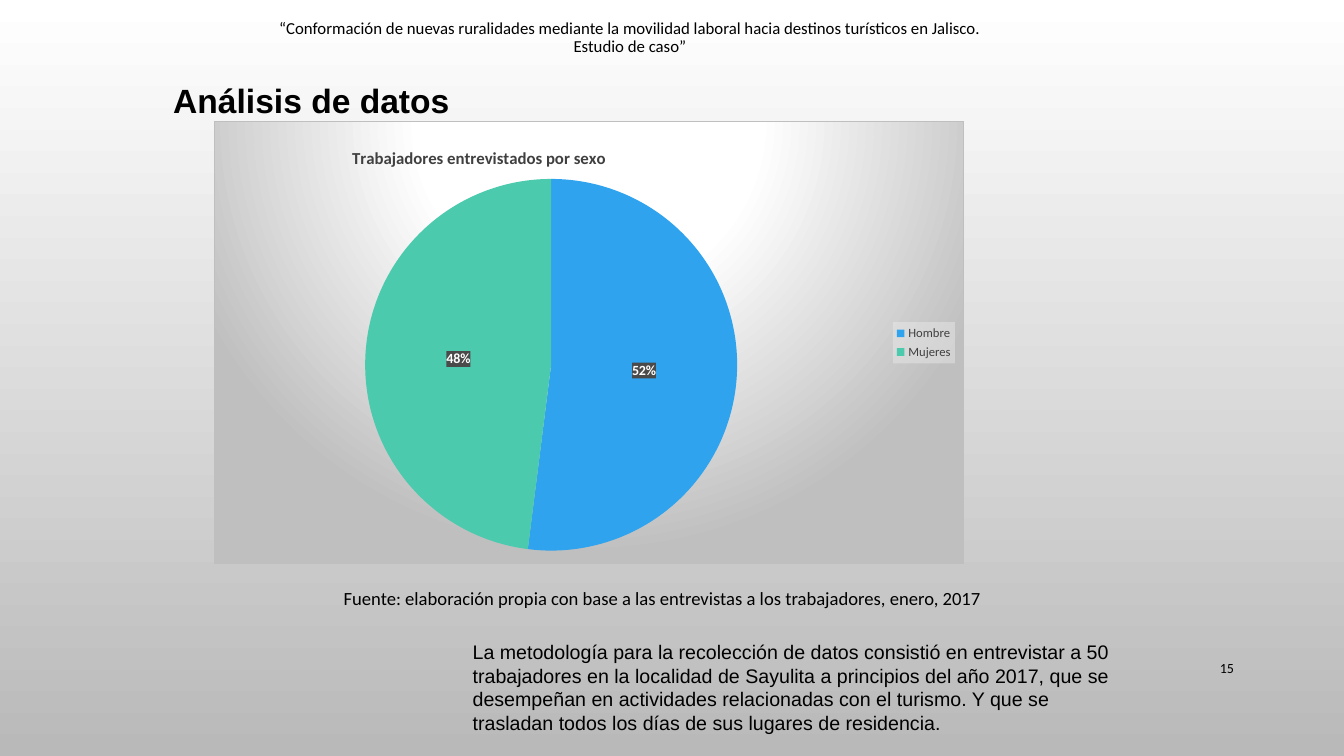
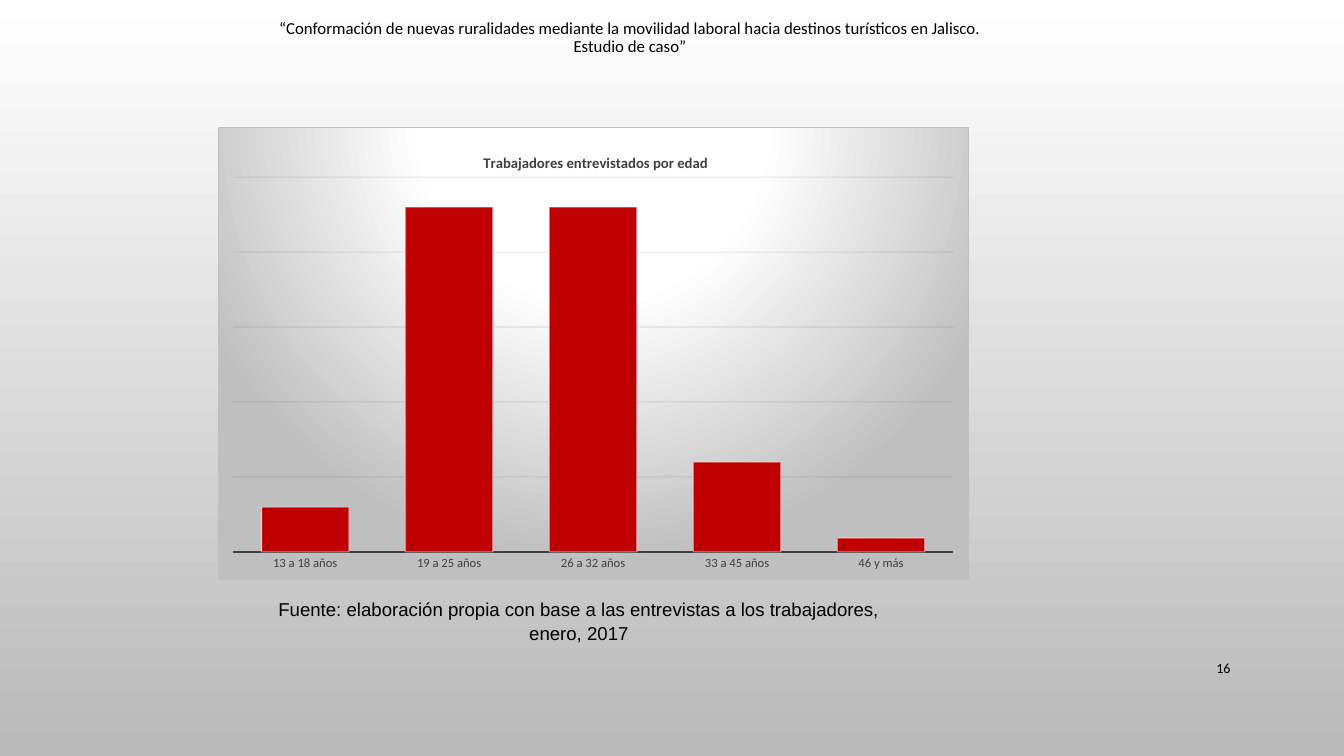
from dataclasses import dataclass
from typing import Any

from pptx import Presentation
from pptx.chart import data as chart_data
from pptx.dml.color import RGBColor
from pptx.enum import chart as ch, text as tx
from pptx.oxml import parse_xml
from pptx.oxml.ns import nsdecls, qn
from pptx.util import Pt

BLACK = RGBColor(0x00, 0x00, 0x00)
WHITE = RGBColor(0xFF, 0xFF, 0xFF)
BACKDROP_GRAY = RGBColor(0xB9, 0xB9, 0xB9)
PANEL_GRAY = RGBColor(0xBF, 0xBF, 0xBF)
LEGEND_GRAY = RGBColor(0xF2, 0xF2, 0xF2)
LABEL_GRAY = RGBColor(0x4A, 0x4A, 0x4A)
DARK_GRAY = RGBColor(0x40, 0x40, 0x40)
GRID_BLACK = RGBColor(0x0D, 0x0D, 0x0D)
BLUE = RGBColor(0x2F, 0xA3, 0xEE)
GREEN = RGBColor(0x4B, 0xCA, 0xAD)
RED = RGBColor(0xC0, 0x00, 0x00)

BODY_FONT = "Calibri"
TEXT_FONT = "Arial"
SOURCE = ("Fuente: elaboración propia con base a las entrevistas "
          "a los trabajadores, enero, 2017")
METHOD = ("La metodología para la recolección de datos consistió en entrevistar a 50 "
          "trabajadores en la localidad de Sayulita a principios del año 2017, que se "
          "desempeñan en actividades relacionadas con el turismo. Y que se trasladan "
          "todos los días de sus lugares de residencia.")
THESIS = ("“Conformación de nuevas ruralidades mediante la movilidad laboral "
          "hacia destinos turísticos en Jalisco.", "Estudio de caso”")


@dataclass(frozen=True)
class Passage:
    lines: tuple[str, ...]
    left: float
    top: float
    width: float
    height: float
    size: float
    font: str = BODY_FONT
    bold: bool = False
    align: Any = tx.PP_ALIGN.LEFT
    anchor: Any = tx.MSO_ANCHOR.TOP
    wrap: bool = True
    grow: bool = True
    side_inset: float = 7.2
    top_inset: float = 3.6
    spacing: float | None = None
    after: float = 0


@dataclass(frozen=True)
class Survey:
    kind: Any
    title: str
    title_size: float
    answers: dict[str, int]
    left: float
    top: float
    width: float
    height: float
    title_place: tuple[float, float]
    plot_place: tuple[float, float, float, float]


def write_passage(slide: Any, passage: Passage) -> None:
    box = slide.shapes.add_textbox(
        Pt(passage.left), Pt(passage.top), Pt(passage.width), Pt(passage.height))
    frame = box.text_frame
    frame.word_wrap = passage.wrap
    frame.auto_size = (tx.MSO_AUTO_SIZE.SHAPE_TO_FIT_TEXT if passage.grow
                       else tx.MSO_AUTO_SIZE.NONE)
    frame.vertical_anchor = passage.anchor
    frame.margin_left = frame.margin_right = Pt(passage.side_inset)
    frame.margin_top = Pt(passage.top_inset)
    paragraph = frame.paragraphs[0]
    paragraph.alignment = passage.align
    paragraph.space_after = Pt(passage.after)
    if passage.spacing:
        paragraph.line_spacing = passage.spacing
    for index, line in enumerate(passage.lines):
        if index:
            paragraph.add_line_break()
        run = paragraph.add_run()
        run.text = line
        style_font(run.font, passage.size, BLACK, passage.bold, passage.font)


def style_font(font: Any, size: float, color: RGBColor,
               bold: bool = False, name: str = BODY_FONT) -> None:
    font.name = name
    font.size = Pt(size)
    font.bold = bold
    font.color.rgb = color


def paint(part: Any, fill: str) -> None:
    properties = parse_xml(f'<c:spPr {nsdecls("c", "a")}>{fill}</c:spPr>')
    part.find(qn("c:txPr")).addprevious(properties)


def solid(color: RGBColor, opacity: int = 100) -> str:
    return (f'<a:solidFill><a:srgbClr val="{color}">'
            f'<a:alpha val="{opacity * 1000}"/></a:srgbClr></a:solidFill>')


def spotlight() -> str:
    stops = "".join(
        f'<a:gs pos="{position * 1000}"><a:srgbClr val="{color}"/></a:gs>'
        for position, color in ((0, WHITE), (39, WHITE), (100, PANEL_GRAY)))
    return (f'<a:gradFill><a:gsLst>{stops}</a:gsLst><a:path path="circle">'
            '<a:fillToRect l="50000" t="-80000" r="50000" b="180000"/></a:path></a:gradFill>'
            f'<a:ln w="{Pt(0.75)}">{solid(PANEL_GRAY)}</a:ln>')


def fade_line(part: Any, opacity: int) -> None:
    for line in part.iter(qn("a:ln")):
        for color in line.iter(qn("a:srgbClr")):
            color.append(parse_xml(f'<a:alpha {nsdecls("a")} val="{opacity * 1000}"/>'))


def place(part: Any, place_at: tuple[float, ...], target: str = "") -> None:
    for previous in part.findall(qn("c:layout")):
        part.remove(previous)
    names = ("x", "y", "w", "h")[:len(place_at)]
    modes = "".join(f'<c:{name}Mode val="edge"/>' for name in ("x", "y"))
    sizes = "".join(f'<c:{name} val="{value}"/>' for name, value in zip(names, place_at))
    layout = parse_xml(f'<c:layout {nsdecls("c")}><c:manualLayout>{target}{modes}{sizes}'
                       '</c:manualLayout></c:layout>')
    content = part.find(qn("c:tx"))
    if content is None:
        part.insert(0, layout)
    else:
        content.addnext(layout)


def draw_survey(slide: Any, survey: Survey) -> Any:
    counts = chart_data.CategoryChartData()
    counts.categories = list(survey.answers)
    counts.add_series("Series 1", list(survey.answers.values()))
    chart = slide.shapes.add_chart(
        survey.kind, Pt(survey.left), Pt(survey.top),
        Pt(survey.width), Pt(survey.height), counts).chart
    style_font(chart.font, 10, BLACK)
    paint(chart.element, spotlight())
    chart.has_legend = False
    chart.has_title = True
    title = chart.chart_title
    run = title.text_frame.paragraphs[0].add_run()
    run.text = survey.title
    style_font(run.font, survey.title_size, DARK_GRAY, True)
    title.include_in_layout = False
    place(title.element, survey.title_place)
    place(chart.element.find(".//" + qn("c:plotArea")), survey.plot_place,
          '<c:layoutTarget val="inner"/>')
    return chart


def draw_sexes(slide: Any) -> None:
    chart = draw_survey(slide, Survey(
        ch.XL_CHART_TYPE.PIE, "Trabajadores entrevistados por sexo", 12,
        {"Hombre": 52, "Mujeres": 48}, 152.64, 86.4, 535.68, 316.8,
        (0.18, 0.05), (0.2, 0.13, 0.5, 0.84)))
    chart.has_legend = True
    chart.legend.position = ch.XL_LEGEND_POSITION.RIGHT
    chart.legend.include_in_layout = False
    style_font(chart.legend.font, 9, DARK_GRAY)
    paint(chart.element.find(".//" + qn("c:legend")), solid(LEGEND_GRAY, 39))
    sexes = chart.plots[0].series[0]
    for index, color in enumerate((BLUE, GREEN)):
        slice_fill = sexes.points[index].format.fill
        slice_fill.solid()
        slice_fill.fore_color.rgb = color
    labels = sexes.data_labels
    labels.show_value = False
    labels.show_percentage = True
    labels.number_format = "0%"
    labels.number_format_is_linked = False
    labels.position = ch.XL_LABEL_POSITION.CENTER
    style_font(labels.font, 10, WHITE, True)
    paint(chart.element.find(".//" + qn("c:dLbls")), solid(LABEL_GRAY))


def draw_ages(slide: Any) -> None:
    chart = draw_survey(slide, Survey(
        ch.XL_CHART_TYPE.COLUMN_CLUSTERED, "Trabajadores entrevistados por edad", 10.5,
        {"13 a 18 años": 13, "19 a 25 años": 100, "26 a 32 años": 100,
         "33 a 45 años": 26, "46 y más": 4}, 155.52, 90.72, 536.4, 323.28,
        (0.35, 0.05), (0.02, 0.11, 0.96, 0.83)))
    columns = chart.plots[0]
    columns.gap_width = 65
    columns.vary_by_categories = False
    ages = columns.series[0]
    ages.format.fill.solid()
    ages.format.fill.fore_color.rgb = RED
    ages.format.line.color.rgb = WHITE
    ages.format.line.width = Pt(0.75)
    fade_line(ages.format.element, 50)
    age_axis = chart.category_axis
    age_axis.major_tick_mark = ch.XL_TICK_MARK.NONE
    age_axis.format.line.color.rgb = DARK_GRAY
    age_axis.format.line.width = Pt(1.5)
    style_font(age_axis.tick_labels.font, 9, DARK_GRAY)
    count_axis = chart.value_axis
    count_axis.visible = False
    count_axis.minimum_scale = 0
    count_axis.maximum_scale = 108.7
    count_axis.major_unit = 21.74
    count_axis.has_major_gridlines = True
    grid = count_axis.major_gridlines.format
    grid.line.color.rgb = GRID_BLACK
    grid.line.width = Pt(0.75)
    fade_line(grid.element, 10)


def source_note(left: float, top: float, height: float, font: str) -> Passage:
    return Passage((SOURCE,), left, top, 480, height, 13.3, font,
                   align=tx.PP_ALIGN.CENTER, spacing=1.07, after=10.7)


def add_page(deck: Any, number: int, number_inset: float) -> Any:
    slide = deck.slides.add_slide(deck.slide_layouts[6])
    write_passage(slide, Passage(
        (str(number),), 828, 462.96, 60.48, 28.8, 10, align=tx.PP_ALIGN.RIGHT,
        anchor=tx.MSO_ANCHOR.MIDDLE, grow=False, side_inset=number_inset))
    write_passage(slide, Passage(
        THESIS, 0, 0, 900, 60, 12, align=tx.PP_ALIGN.CENTER,
        grow=False, top_inset=14, spacing=0.9))
    return slide


def paint_backdrop(deck: Any) -> None:
    fill = deck.slide_master.background.fill
    fill.gradient()
    fill.gradient_angle = 270
    for stop, color in zip(fill.gradient_stops, (WHITE, BACKDROP_GRAY)):
        stop.color.rgb = color


def main() -> None:
    deck = Presentation()
    deck.slide_width, deck.slide_height = Pt(960), Pt(540)
    paint_backdrop(deck)

    by_sex = add_page(deck, 15, 7.2)
    write_passage(by_sex, Passage(("Análisis de datos",), 116.64, 53.28, 213.84, 36,
                                  24, TEXT_FONT, bold=True, wrap=False))
    write_passage(by_sex, Passage((METHOD,), 330.48, 453.6, 480, 74.88, 14, TEXT_FONT))
    draw_sexes(by_sex)
    write_passage(by_sex, source_note(233.28, 414.72, 23.76, BODY_FONT))

    by_age = add_page(deck, 16, 9.6)
    draw_ages(by_age)
    write_passage(by_age, source_note(173.52, 422.64, 40.32, TEXT_FONT))

    deck.save("out.pptx")


if __name__ == "__main__":
    main()
